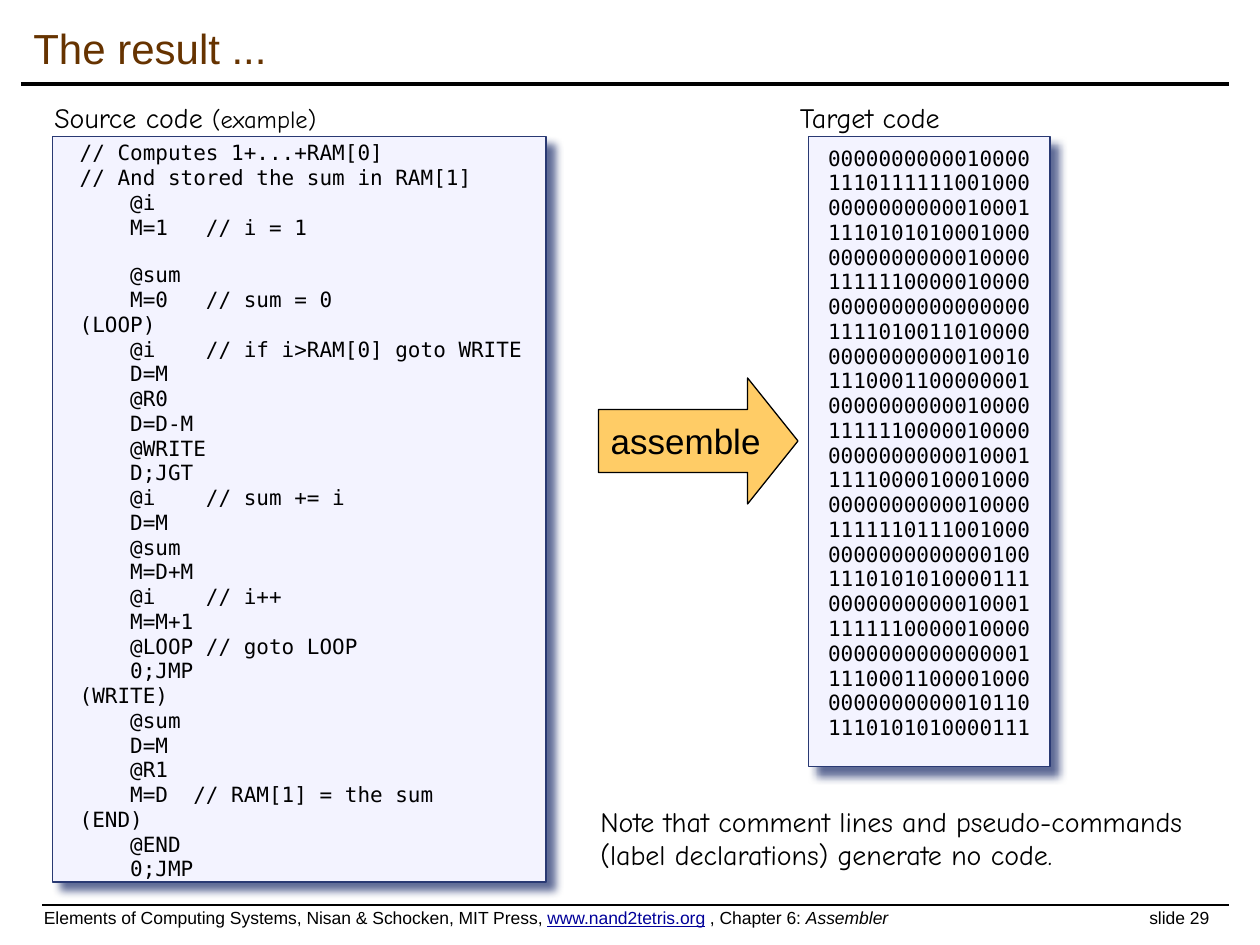
from lxml import etree
from pptx import Presentation
from pptx.dml.color import RGBColor
from pptx.enum.shapes import MSO_CONNECTOR, MSO_SHAPE
from pptx.enum.text import MSO_ANCHOR, PP_ALIGN
from pptx.oxml.ns import qn
from pptx.util import Pt

PX = 7620  # EMU in one px, 120 px to the inch
STRAIGHT = MSO_CONNECTOR.STRAIGHT
RECT, RIGHT_ARROW = MSO_SHAPE.RECTANGLE, MSO_SHAPE.RIGHT_ARROW
TOP, MIDDLE = MSO_ANCHOR.TOP, MSO_ANCHOR.MIDDLE
LEFT, CENTER = PP_ALIGN.LEFT, PP_ALIGN.CENTER

BLACK, BROWN, LINK = "000000", "663300", "000099"
PANEL, NAVY, AMBER = "F3F3FF", "293973", "FFCC66"
SANS, HAND, MONO = "Arial", "Comic Neue", "DejaVu Sans Mono"
LINE_GAP, BLOCK_GAP = 1.2, 14.3  # points before a code line, and after an empty one

SOURCE = """\
// Computes 1+...+RAM[0]
// And stored the sum in RAM[1]
    @i
    M=1   // i = 1

    @sum
    M=0   // sum = 0
(LOOP)
    @i    // if i>RAM[0] goto WRITE
    D=M
    @R0
    D=D-M
    @WRITE
    D;JGT
    @i    // sum += i
    D=M
    @sum
    M=D+M
    @i    // i++
    M=M+1
    @LOOP // goto LOOP
    0;JMP
(WRITE)
    @sum
    D=M
    @R1
    M=D  // RAM[1] = the sum
(END)
    @END
    0;JMP"""

TARGET = """\
0000000000010000
1110111111001000
0000000000010001
1110101010001000
0000000000010000
1111110000010000
0000000000000000
1111010011010000
0000000000010010
1110001100000001
0000000000010000
1111110000010000
0000000000010001
1111000010001000
0000000000010000
1111110111001000
0000000000000100
1110101010000111
0000000000010001
1111110000010000
0000000000000001
1110001100001000
0000000000010110
1110101010000111"""


def rgb(value):
    return RGBColor.from_string(value)


def emu(*lengths):
    return [n * PX for n in lengths]


def add_run(p, text, size, font, color=BLACK, **formats):
    r = p.add_run()
    r.text = text
    r.font.color.rgb = rgb(color)
    for name, value in {"size": Pt(size), "name": font, **formats}.items():
        setattr(r.font, name, value)


def set_frame(tf, insets=(12, 6, 12, 6), anchor=TOP, wrap=True):
    """Set wrapping, anchor and the left, top, right and bottom insets."""
    tf.word_wrap = wrap
    tf.vertical_anchor = anchor
    for side, inset in zip(("left", "top", "right", "bottom"), insets):
        setattr(tf, f"margin_{side}", inset * PX)


def add_text(slide, box, runs, **frame):
    """Place a one-paragraph text box and return its paragraph."""
    tf = slide.shapes.add_textbox(*emu(*box)).text_frame
    set_frame(tf, **frame)
    p = tf.paragraphs[0]
    for text, size, font, *rest in runs:
        add_run(p, text, size, font, *rest)
    return p


def add_rule(slide, x1, x2, y, width):
    line = slide.shapes.add_connector(STRAIGHT, *emu(x1, y, x2, y))
    line.line.color.rgb = rgb(BLACK)
    line.line.width = Pt(width)
    etree.SubElement(line._element.spPr, qn("a:effectLst"))


def add_box(slide, kind, box, fill, line):
    sp = slide.shapes.add_shape(kind, *emu(*box))
    sp.fill.solid()
    sp.fill.fore_color.rgb = rgb(fill)
    sp.line.color.rgb = rgb(line)
    sp.line.width = Pt(0.75)
    sp.shadow.inherit = False
    return sp


def add_drop_shadow(sp):
    effects = sp._element.spPr.find(qn("a:effectLst"))
    shadow = etree.SubElement(effects, qn("a:outerShdw"), blurRad=str(Pt(5)),
                              dist=str(Pt(7.1)), dir="2700000", algn="tl", rotWithShape="0")
    color = etree.SubElement(shadow, qn("a:srgbClr"), val=NAVY)
    etree.SubElement(color, qn("a:alpha"), val="75000")


def add_code_panel(slide, box, code, insets, align):
    """Draw a shadowed panel of code; an empty line becomes space before the next."""
    sp = add_box(slide, RECT, box, PANEL, NAVY)
    add_drop_shadow(sp)
    tf = sp.text_frame
    set_frame(tf, insets)
    p, gap = tf.paragraphs[0], LINE_GAP
    for line in code.split("\n"):
        if not line:
            gap = BLOCK_GAP
            continue
        if p.runs:
            p = tf.add_paragraph()
            p.space_before = Pt(gap)
        gap = LINE_GAP
        p.alignment = align
        p.line_spacing = 0.9
        add_run(p, line, 12, MONO)


def add_header(slide, x, y, w, h):
    add_text(slide, (x, y, w, h), [("The result ...", 24, SANS, BROWN)], anchor=MIDDLE)
    add_rule(slide, x, x + w, y + h, 2)


def add_source(slide, x, y, w, h):
    add_code_panel(slide, (x, y + 40, w, h - 40), SOURCE, (26, 6, 0, 6), LEFT)
    add_text(slide, (x - 10, y, 398, 50),
             [("Source code ", 16, HAND), ("(example)", 14, HAND)])


def add_target(slide, x, y, w, h):
    add_code_panel(slide, (x, y + 40, w, h - 40), TARGET, (7, 11, 7, 11), CENTER)
    add_text(slide, (x - 20, y, 179, 50), [("Target code", 16, HAND)])


def add_assemble_arrow(slide, x, y, w, h):
    sp = add_box(slide, RIGHT_ARROW, (x, y, w, h), AMBER, BLACK)
    sp.adjustments[0], sp.adjustments[1] = 0.5, 0.4
    set_frame(sp.text_frame, anchor=MIDDLE, wrap=False)
    p = sp.text_frame.paragraphs[0]
    p.alignment = CENTER
    add_run(p, "assemble", 20, SANS)


def add_footer(slide, x, y, w, h):
    add_rule(slide, x + 10, x + w, y, 1)
    p = add_text(slide, (x, y + 2, w, h), [
        ("Elements of Computing Systems, Nisan & Schocken, MIT Press, ", 10, SANS),
    ], insets=(12, 0, 12, 0))
    tabs = etree.SubElement(p._p.get_or_add_pPr(), qn("a:tabLst"))
    etree.SubElement(tabs, qn("a:tab"), pos=str((w - 30) * PX), algn="r")
    add_run(p, "www.nand2tetris.org", 10, SANS, LINK, underline=True)
    add_run(p, " , Chapter 6: ", 10, SANS)
    add_run(p, "Assembler", 10, SANS, italic=True)
    add_run(p, "\tslide 29", 10, SANS)


def main():
    prs = Presentation()
    prs.slide_width, prs.slide_height = emu(1200, 900)
    slide = prs.slides.add_slide(prs.slide_layouts[6])
    add_header(slide, 20, 10, 1150, 70)
    add_source(slide, 50, 90, 470, 750)
    add_assemble_arrow(slide, 570, 360, 190, 120)
    add_target(slide, 770, 90, 230, 640)
    add_text(slide, (560, 760, 620, 80), [
        ("Note that comment lines and pseudo-commands (label declarations) "
         "generate no code.", 16, HAND)])
    add_footer(slide, 30, 862, 1140, 32)
    prs.save("out.pptx")


if __name__ == "__main__":
    main()
